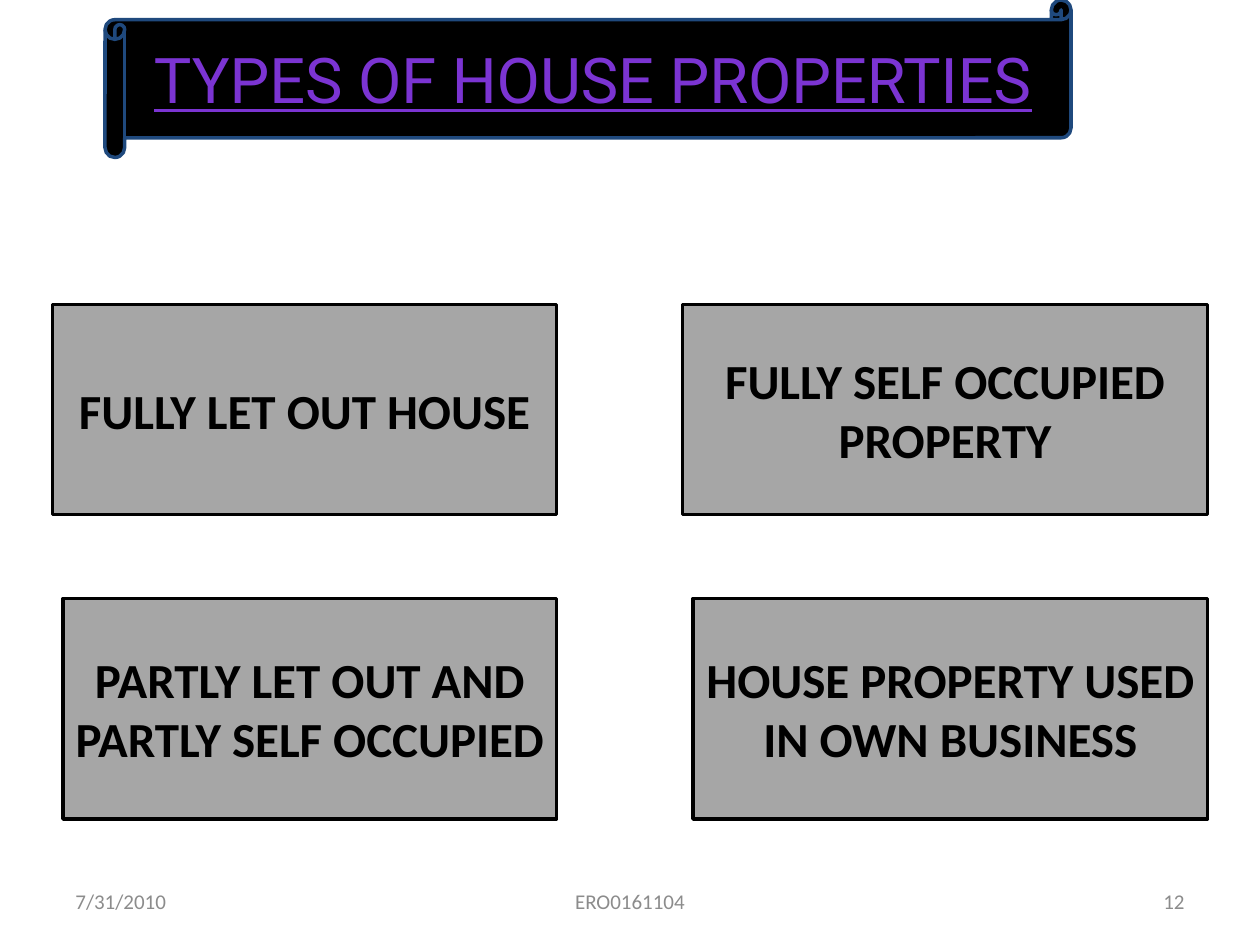
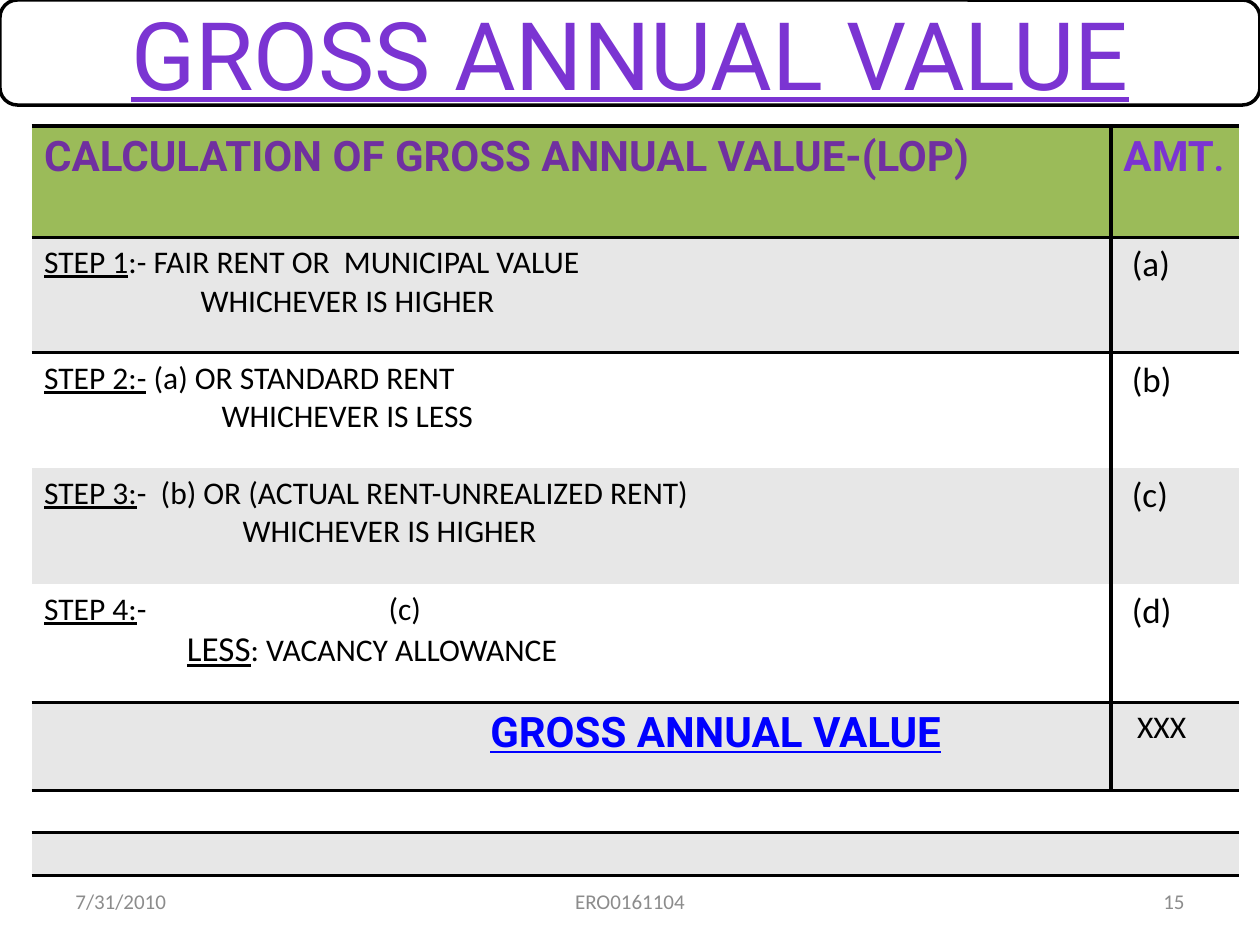
"""Builds two slides: types of house property and the gross annual value table."""
from dataclasses import dataclass
from typing import Optional

from lxml import etree
from pptx import Presentation
from pptx.dml.color import RGBColor
from pptx.enum.shapes import MSO_SHAPE
from pptx.enum.text import MSO_ANCHOR, PP_ALIGN
from pptx.oxml.ns import qn
from pptx.util import Pt

SCALE = 7620
SCROLL = MSO_SHAPE.HORIZONTAL_SCROLL
ROUND = MSO_SHAPE.ROUNDED_RECTANGLE
PROCESS = MSO_SHAPE.FLOWCHART_PROCESS
RECT = MSO_SHAPE.RECTANGLE
LEFT, CENTER, RIGHT = PP_ALIGN.LEFT, PP_ALIGN.CENTER, PP_ALIGN.RIGHT
MIDDLE = MSO_ANCHOR.MIDDLE
PLAIN = "{2D5ABB26-0587-4C30-8999-92F81FD0307C}"


@dataclass(frozen=True)
class Theme:
    """Colours, fonts and type sizes."""
    black: str = "000000"
    white: str = "FFFFFF"
    navy: str = "1F497D"
    violet: str = "7B34D2"
    plum: str = "7030A0"
    blue: str = "0000FF"
    green: str = "9BBB59"
    gray: str = "A6A6A6"
    pale: str = "E7E7E7"
    muted: str = "8C8C8C"
    body: str = "Calibri"
    head: str = "Roboto"
    small: int = 12
    text: int = 18
    mark: int = 20
    label: int = 24
    box: int = 28
    rule: float = 2
    heavy: float = 2.25


THEME = Theme()


@dataclass(frozen=True)
class Style:
    """Type style of a paragraph."""
    size: int
    color: str = THEME.black
    face: str = THEME.body
    bold: bool = False
    under: Optional[bool] = None


@dataclass(frozen=True)
class Span:
    """Run of text with its own underline or size."""
    text: str
    under: bool = False
    size: Optional[int] = None


@dataclass(frozen=True)
class Para:
    """Paragraph with its indent and tab stop in px."""
    spans: tuple[Span, ...]
    style: Style
    indent: int = 0
    tab: int = 0


@dataclass(frozen=True)
class Box:
    """Outlined shape with centred text."""
    kind: int
    area: tuple[int, int, int, int]
    text: str
    style: Style
    fill: str
    edge: str = THEME.black


@dataclass(frozen=True)
class Foot:
    """Footer field."""
    left: int
    width: int
    align: int


@dataclass(frozen=True)
class Row:
    """Table row."""
    height: int
    fill: str
    cells: tuple[tuple[Para, ...], ...] = ((), ())
    top: float = 0
    base: float = 0
    split: bool = True


TITLE = Style(36, THEME.violet, THEME.head, under=True)
BANNER = Style(54, THEME.violet, THEME.head, under=True)
CARD = Style(THEME.box, bold=True)
NOTE = Style(THEME.small, THEME.muted)
STEP = Style(THEME.text)
MARK = Style(THEME.mark)
HEAD = Style(THEME.label, THEME.plum, THEME.head, True)
AMOUNT = Style(THEME.label, THEME.violet, THEME.head, True)
TOTAL = Style(THEME.label, THEME.blue, THEME.head, True, True)

FEET = (Foot(60, 280, LEFT), Foot(410, 380, CENTER), Foot(860, 280, RIGHT))

TYPES = (
    Box(SCROLL, (100, 0, 920, 150), "TYPES OF HOUSE PROPERTIES", TITLE,
        THEME.black, THEME.navy),
    Box(PROCESS, (50, 290, 480, 200), "FULLY LET OUT HOUSE", CARD, THEME.gray),
    Box(RECT, (650, 290, 500, 200), "FULLY SELF OCCUPIED PROPERTY", CARD, THEME.gray),
    Box(RECT, (60, 570, 470, 210), "PARTLY LET OUT AND PARTLY SELF OCCUPIED", CARD,
        THEME.gray),
    Box(RECT, (660, 570, 490, 210), "HOUSE PROPERTY USED IN OWN BUSINESS", CARD,
        THEME.gray),
)
VALUE = Box(ROUND, (0, 0, 1200, 100), "GROSS ANNUAL VALUE", BANNER, THEME.white)


def single(text: str, style: Style, indent: int = 0) -> tuple[Para, ...]:
    """Return one paragraph holding one run."""
    return (Para((Span(text, bool(style.under)),), style, indent),)


def step(name: str, rest: str, then: tuple[Span, ...], indent: int,
         tab: int = 0) -> tuple[Para, ...]:
    """Return the two lines of a calculation step."""
    first = Para((Span(name, True), Span(rest)), STEP, tab=tab)
    return first, Para(then, STEP, indent)


def mark(letter: str) -> tuple[Para, ...]:
    """Return the letter of a step's amount."""
    return single(f"({letter})", MARK, 8)


ROWS = (
    Row(106, THEME.green,
        (single("CALCULATION OF GROSS ANNUAL VALUE-(LOP)", HEAD),
         (Para((Span("AMT"), Span(".", size=THEME.mark)), AMOUNT),)),
        THEME.rule, THEME.rule),
    Row(110, THEME.pale,
        (step("STEP 1", ":- FAIR RENT OR  MUNICIPAL VALUE",
              (Span("WHICHEVER IS HIGHER"),), 149), mark("a")), THEME.rule),
    Row(110, THEME.white,
        (step("STEP 2:-", " (a) OR STANDARD RENT",
              (Span("WHICHEVER IS LESS"),), 169), mark("b"))),
    Row(110, THEME.pale,
        (step("STEP 3:", "-  (b) OR (ACTUAL RENT-UNREALIZED RENT)",
              (Span("WHICHEVER IS HIGHER"),), 189), mark("c"))),
    Row(113, THEME.white,
        (step("STEP 4:", "-\t(c)",
              (Span("LESS", True, THEME.mark), Span(": VACANCY ALLOWANCE")), 136, 328),
         mark("d")), base=THEME.heavy),
    Row(84, THEME.pale,
        (single("GROSS ANNUAL VALUE", TOTAL, 425), single("XXX", STEP, 13)),
        THEME.heavy, THEME.heavy),
    Row(40, THEME.white, top=THEME.heavy, base=THEME.rule, split=False),
    Row(41, THEME.pale, top=THEME.rule, base=THEME.rule, split=False),
)
COLS = (1028, 122)


def px(value: int) -> int:
    """Turn px into EMU."""
    return value * SCALE


def rgb(color: str) -> RGBColor:
    """Return a colour from its hex code."""
    return RGBColor.from_string(color)


def paint(font, style: Style) -> None:
    """Apply a type style to a font."""
    font.name, font.size, font.bold = style.face, Pt(style.size), style.bold
    font.color.rgb = rgb(style.color)
    if style.under is not None:
        font.underline = style.under


def write(frame, paras: tuple[Para, ...], align: int = LEFT) -> None:
    """Write paragraphs into a text frame."""
    for rank, item in enumerate(paras):
        para = frame.add_paragraph() if rank else frame.paragraphs[0]
        para.alignment = align
        props = para._p.get_or_add_pPr()
        if item.indent:
            props.set("marL", str(px(item.indent)))
            props.set("indent", "0")
        if item.tab:
            stops = etree.SubElement(props, qn("a:tabLst"))
            etree.SubElement(stops, qn("a:tab"), pos=str(px(item.tab)), algn="l")
        paint(para.font, item.style)
        for span in item.spans:
            run = para.add_run()
            run.text = span.text
            if span.under and not item.style.under:
                run.font.underline = True
            if span.size:
                run.font.size = Pt(span.size)


def draw(slide, box: Box) -> None:
    """Draw an outlined shape."""
    shape = slide.shapes.add_shape(box.kind, *map(px, box.area))
    shape.shadow.inherit = False
    shape.fill.solid()
    shape.fill.fore_color.rgb = rgb(box.fill)
    shape.line.color.rgb = rgb(box.edge)
    shape.line.width = Pt(THEME.rule)
    write(shape.text_frame, single(box.text, box.style), CENTER)


def footer(slide, page: str) -> None:
    """Draw the date, code and page number."""
    for foot, text in zip(FEET, ("7/31/2010", "ERO0161104", page)):
        area = (foot.left, 834, foot.width, 48)
        frame = slide.shapes.add_textbox(*map(px, area)).text_frame
        frame.word_wrap = True
        frame.vertical_anchor = MIDDLE
        write(frame, single(text, NOTE), foot.align)


def border(cell, sides: dict[str, float]) -> None:
    """Add black borders of the given widths to a cell."""
    props = cell._tc.get_or_add_tcPr()
    for side, width in sides.items():
        if width:
            line = etree.SubElement(props, qn(f"a:ln{side}"), w=str(Pt(width)))
            fill = etree.SubElement(line, qn("a:solidFill"))
            etree.SubElement(fill, qn("a:srgbClr"), val=THEME.black)


def grid(slide) -> None:
    """Draw the calculation table."""
    size = (30, 120, sum(COLS), sum(row.height for row in ROWS))
    table = slide.shapes.add_table(len(ROWS), len(COLS), *map(px, size)).table
    table.first_row = table.horz_banding = False
    table._tbl.tblPr.find(qn("a:tableStyleId")).text = PLAIN
    for col, width in zip(table.columns, COLS):
        col.width = px(width)
    for y, row in enumerate(ROWS):
        table.rows[y].height = px(row.height)
        for x, paras in enumerate(row.cells):
            cell = table.cell(y, x)
            wall = THEME.heavy if row.split else 0
            border(cell, {"L" if x else "R": wall, "T": row.top, "B": row.base})
            cell.fill.solid()
            cell.fill.fore_color.rgb = rgb(row.fill)
            if paras:
                write(cell.text_frame, paras)
            else:
                cell.margin_top = cell.margin_bottom = 0


def main() -> None:
    """Build and save the deck."""
    deck = Presentation()
    deck.slide_width, deck.slide_height = px(1200), px(900)
    blank = deck.slide_layouts[6]
    types = deck.slides.add_slide(blank)
    for box in TYPES:
        draw(types, box)
    footer(types, "12")
    value = deck.slides.add_slide(blank)
    draw(value, VALUE)
    grid(value)
    footer(value, "15")
    deck.save("out.pptx")


if __name__ == "__main__":
    main()
